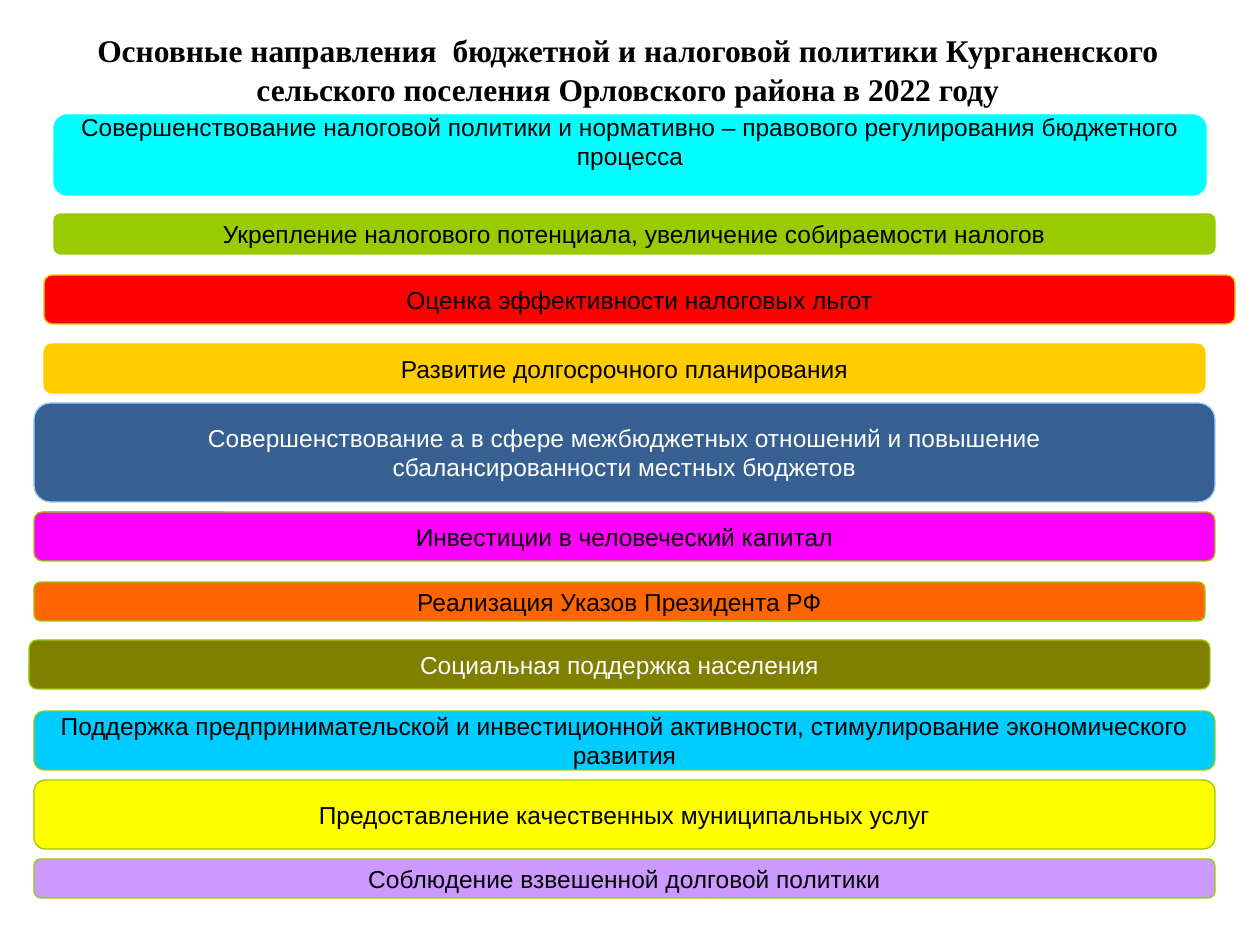
from dataclasses import dataclass

from pptx import Presentation
from pptx.dml.color import RGBColor as Rgb
from pptx.enum.shapes import MSO_SHAPE as Shape
from pptx.enum.text import MSO_ANCHOR as Anchor, PP_ALIGN as Align
from pptx.util import Pt

EMU_PER_PX = 914400 / 126


@dataclass(frozen=True)
class Theme:
    title_font: str = "Times New Roman"
    body_font: str = "Arial"
    title_size: int = 18
    body_size: int = 14
    black: str = "000000"
    white: str = "FFFFFF"
    cyan: str = "00FFFF"
    green: str = "99CC00"
    red: str = "FF0000"
    amber: str = "FFCC00"
    navy: str = "376092"
    pale_blue: str = "99CCFF"
    magenta: str = "FF00FF"
    orange: str = "FF6600"
    olive: str = "808000"
    sky: str = "00CCFF"
    yellow: str = "FFFF00"
    lilac: str = "CC99FF"


THEME = Theme()


def px(length):
    return round(length * EMU_PER_PX)


def write_text(shape, text, *, font=THEME.body_font, size=THEME.body_size,
               color=THEME.black, bold=False, wrap=False, bottom=0, spacing=1.0):
    """Centre the text, one paragraph per line; bottom lifts it by an inset in px."""
    frame = shape.text_frame
    frame.text = text
    frame.word_wrap = wrap
    frame.vertical_anchor = Anchor.MIDDLE
    frame.margin_top = 0
    frame.margin_bottom = px(bottom)
    for paragraph in frame.paragraphs:
        paragraph.alignment = Align.CENTER
        paragraph.line_spacing = spacing
        paragraph.font.name = font
        paragraph.font.size = Pt(size)
        paragraph.font.bold = bold
        paragraph.font.color.rgb = Rgb.from_string(color)


presentation = Presentation()
presentation.slide_width, presentation.slide_height = px(1260), px(945)
slide = presentation.slides.add_slide(presentation.slide_layouts[5])

title = slide.shapes.title
title.left, title.top, title.width, title.height = map(px, (59, 55, 1138, 59))
write_text(
    title,
    "Основные направления  бюджетной и налоговой политики Курганенского "
    "сельского поселения Орловского района в 2022 году",
    font=THEME.title_font, size=THEME.title_size, bold=True, wrap=True,
    bottom=32, spacing=1.05,
)

# left, top, width, height, fill, line, text, text format
directions = [
    (54, 115, 1152, 80, THEME.cyan, THEME.cyan,
     "Совершенствование налоговой политики и нормативно – правового "
     "регулирования бюджетного\nпроцесса", {"bottom": 27}),
    (54, 214, 1161, 40, THEME.green, THEME.green,
     "Укрепление налогового потенциала, увеличение собираемости налогов", {}),
    (44, 275, 1191, 49, THEME.red, THEME.amber,
     "Оценка эффективности налоговых льгот", {"wrap": True}),
    (44, 344, 1161, 49, THEME.amber, THEME.amber,
     "Развитие долгосрочного планирования", {}),
    (34, 403, 1181, 99, THEME.navy, THEME.pale_blue,
     "Совершенствование а в сфере межбюджетных отношений и повышение\n"
     "сбалансированности местных бюджетов", {"color": THEME.white}),
    (34, 512, 1181, 49, THEME.magenta, THEME.green,
     "Инвестиции в человеческий капитал", {}),
    (34, 582, 1171, 39, THEME.orange, THEME.green,
     "Реализация Указов Президента РФ", {}),
    (29, 640, 1181, 49, THEME.olive, THEME.green,
     "Социальная поддержка населения", {"color": THEME.white}),
    (34, 711, 1181, 59, THEME.sky, THEME.green,
     "Поддержка предпринимательской и инвестиционной активности, "
     "стимулирование экономического\nразвития", {}),
    (34, 780, 1181, 69, THEME.yellow, THEME.green,
     "Предоставление качественных муниципальных услуг", {}),
    (34, 859, 1181, 39, THEME.lilac, THEME.green,
     "Соблюдение взвешенной долговой политики", {}),
]

for left, top, width, height, fill, line, text, text_format in directions:
    bar = slide.shapes.add_shape(
        Shape.ROUNDED_RECTANGLE, px(left), px(top), px(width), px(height))
    bar.shadow.inherit = False
    bar.fill.solid()
    bar.fill.fore_color.rgb = Rgb.from_string(fill)
    bar.line.color.rgb = Rgb.from_string(line)
    bar.line.width = Pt(0.75)
    write_text(bar, text, **text_format)

presentation.save("out.pptx")
